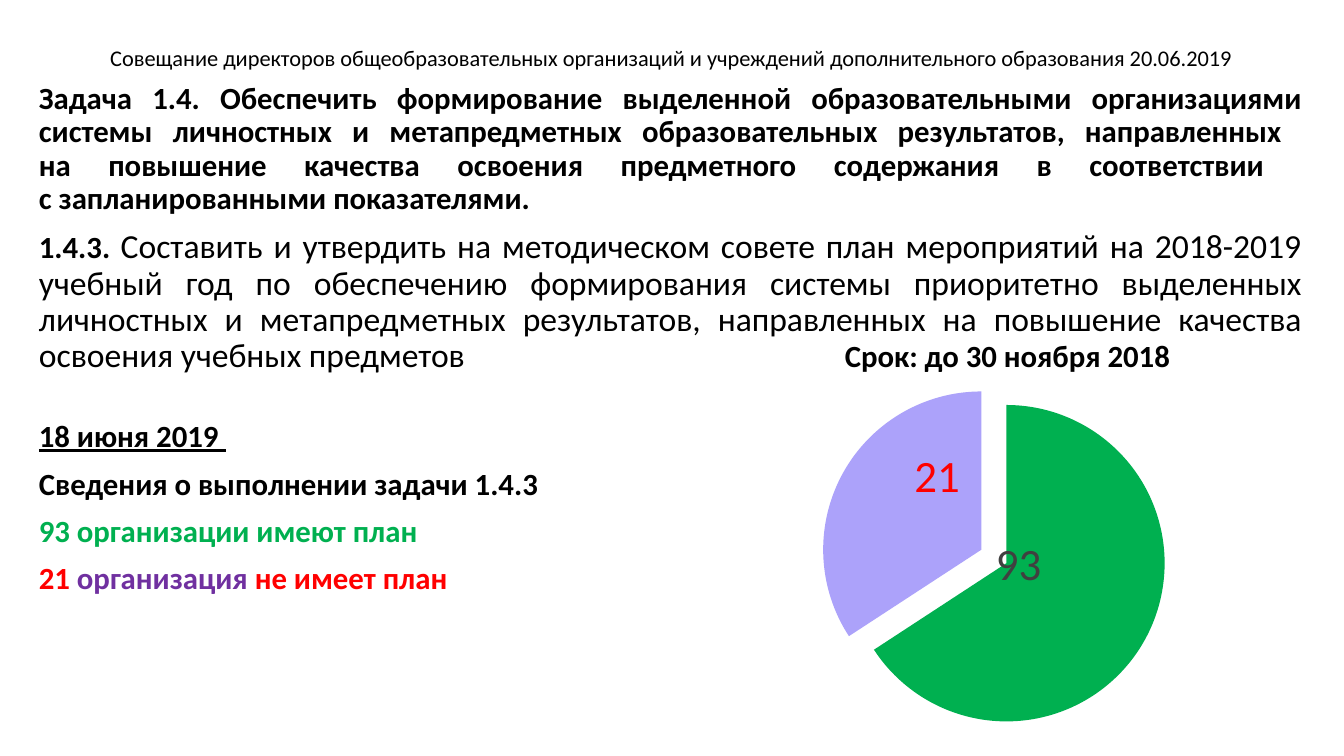
from lxml import etree
from pptx import Presentation
from pptx.chart.data import CategoryChartData
from pptx.dml.color import RGBColor
from pptx.enum.chart import XL_CHART_TYPE, XL_LABEL_POSITION
from pptx.enum.text import MSO_ANCHOR, PP_ALIGN
from pptx.oxml.ns import qn
from pptx.util import Pt

PX = 914400 / 100.8
FONT = "Calibri"
COLORS = {
    "black": "000000",
    "green": "00B050",
    "red": "FF0000",
    "purple": "7030A0",
    "lilac": "ACA2FA",
    "gray": "404040",
}


def px(*lengths):
    return [round(n * PX) for n in lengths]


def style(font, size, color, bold=False):
    font.name = FONT
    font.size = Pt(size)
    font.bold = bold
    font.color.rgb = RGBColor.from_string(COLORS[color])


prs = Presentation()
prs.slide_width, prs.slide_height = px(1344, 756)
s = prs.slides.add_slide(prs.slide_layouts[6])

tf = s.shapes.add_textbox(*px(92, 41, 1159, 37)).text_frame
tf.word_wrap = True
tf.vertical_anchor = MSO_ANCHOR.MIDDLE
p = tf.paragraphs[0]
p.text = "Совещание директоров общеобразовательных организаций и учреждений дополнительного образования 20.06.2019"
p.alignment = PP_ALIGN.CENTER
p.line_spacing = 0.9
style(p.font, 16, "black")

task = (
    "Задача 1.4. Обеспечить формирование выделенной образовательными организациями "
    "системы личностных и метапредметных образовательных результатов, направленных "
    "\vна повышение качества освоения предметного содержания в соответствии "
    "\vс запланированными показателями."
)
plan = (
    "Составить и утвердить на методическом совете план мероприятий на 2018-2019 "
    "учебный год по обеспечению формирования системы приоритетно выделенных "
    "личностных и метапредметных результатов, направленных на повышение качества "
    "освоения учебных предметов\t"
)
paragraphs = [
    (PP_ALIGN.JUSTIFY, 10, [(task, "black")]),
    (PP_ALIGN.JUSTIFY, 10, [("1.4.3. ", "black"), (plan, "black"), ("Срок: до 30 ноября 2018", "black")]),
    (PP_ALIGN.LEFT, 33, [("18 июня 2019 ", "black")]),
    (PP_ALIGN.LEFT, 10, [("Сведения о выполнении задачи 1.4.3", "black")]),
    (PP_ALIGN.LEFT, 10, [("93 организации имеют план", "green")]),
    (PP_ALIGN.LEFT, 10, [("21 ", "red"), ("организация ", "purple"), ("не имеет план", "red")]),
]
tf = s.shapes.add_textbox(*px(29, 78, 1283, 651)).text_frame
tf.word_wrap = True
for i, (align, before, runs) in enumerate(paragraphs):
    p = tf.paragraphs[0] if i == 0 else tf.add_paragraph()
    p.alignment = align
    p.line_spacing = 0.9
    p.space_before = Pt(before)
    if len(runs) == 1:
        text, color = runs[0]
        p.text = text
        style(p.font, 22, color, True)
        continue
    for text, color in runs:
        r = p.add_run()
        r.text = text
        style(r.font, 24 if text == plan else 22, color, text != plan)

tabs = etree.SubElement(tf.paragraphs[1]._p.find(qn("a:pPr")), qn("a:tabLst"))
etree.SubElement(tabs, qn("a:tab"), pos=str(px(806)[0]), algn="l")
tf.paragraphs[2].font.underline = True

data = CategoryChartData()
data.categories = ["1", "2"]
data.add_series("Series 1", [75, 39])
chart = s.shapes.add_chart(XL_CHART_TYPE.PIE, *px(676, 377, 636, 352), data).chart
chart.has_title = False
chart.has_legend = False
style(chart.font, 10, "black")
plot = chart.plots[0]
plot.vary_by_categories = True
series = plot.series[0]
explosion = etree.Element(qn("c:explosion"), val="9")
series._element.find(qn("c:tx")).addnext(explosion)
labels = series.data_labels
labels.show_value = True
labels.show_percentage = False
labels.show_category_name = False
style(labels.font, 32, "gray", True)

layouts = []
slices = [("93", "green", "gray", -0.09, -0.1), ("21", "lilac", "red", 0.04, -0.1)]
for i, (text, fill, color, dx, dy) in enumerate(slices):
    point = series.points[i]
    point.format.fill.solid()
    point.format.fill.fore_color.rgb = RGBColor.from_string(COLORS[fill])
    label = point.data_label
    p = label.text_frame.paragraphs[0]
    r = p.add_run()
    r.text = text
    style(r.font, 32, color)
    label.position = XL_LABEL_POSITION.CENTER
    layout = etree.Element(qn("c:layout"))
    series._element.findall(".//" + qn("c:dLbl"))[i].find(qn("c:idx")).addnext(layout)
    layouts.append((layout, [("x", dx), ("y", dy)]))

area = plot._element.getparent()
for old in area.findall(qn("c:layout")):
    area.remove(old)
layout = etree.Element(qn("c:layout"))
area.insert(0, layout)
layouts.append((layout, [
    ("layoutTarget", "inner"), ("xMode", "edge"), ("yMode", "edge"),
    ("x", 0), ("y", 0.02), ("w", 1), ("h", 0.98),
]))
for layout, settings in layouts:
    manual = etree.SubElement(layout, qn("c:manualLayout"))
    for tag, value in settings:
        etree.SubElement(manual, qn("c:" + tag), val=str(value))

prs.save("out.pptx")
